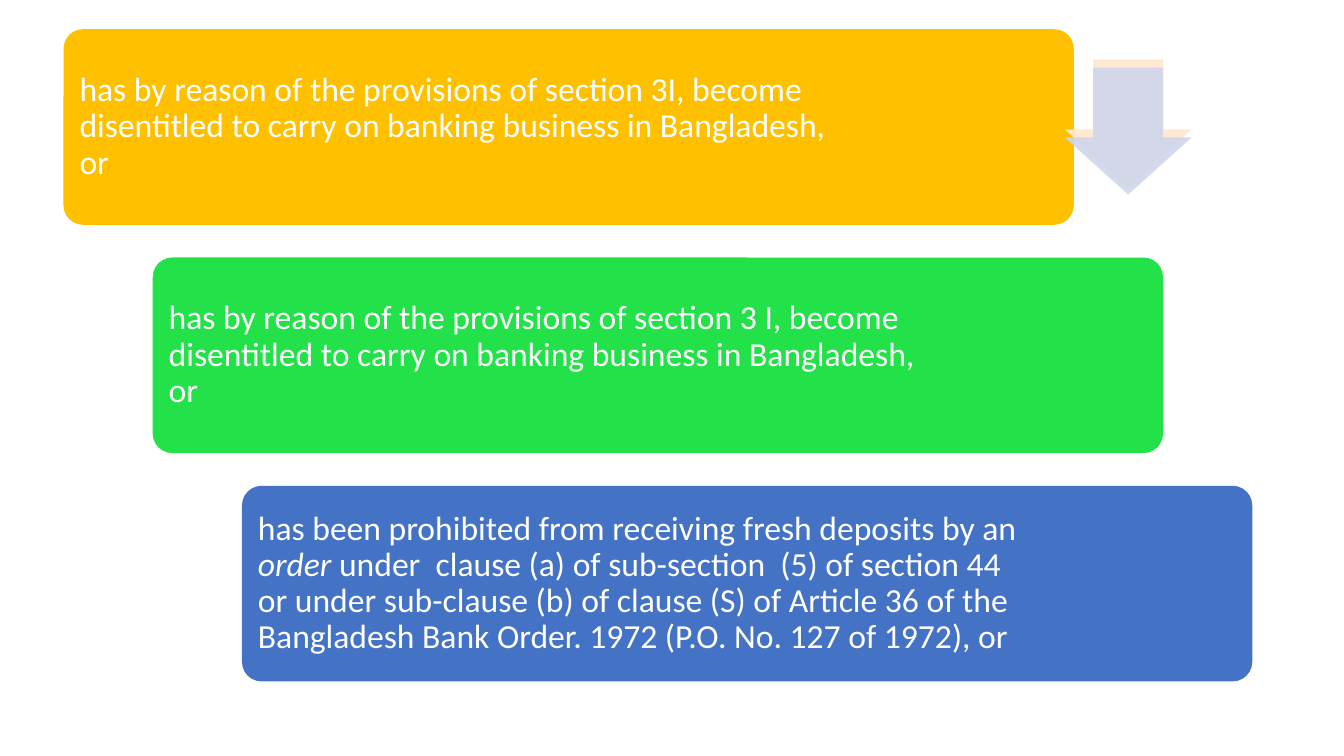
from lxml import etree
from pptx import Presentation
from pptx.dml.color import RGBColor
from pptx.enum.shapes import MSO_SHAPE
from pptx.enum.text import MSO_ANCHOR, PP_ALIGN
from pptx.oxml.ns import qn
from pptx.util import Inches, Pt

AMBER = RGBColor(0xFF, 0xC0, 0x00)
GREEN = RGBColor(0x23, 0xE1, 0x48)
BLUE = RGBColor(0x44, 0x72, 0xC4)
WHITE = RGBColor(0xFF, 0xFF, 0xFF)
PALE_ORANGE = RGBColor(0xFF, 0xE8, 0xCC)
PALE_BLUE = RGBColor(0xCF, 0xD6, 0xEA)

# Each step: fill, text width, runs as (text, italic)
STEPS = [
    (AMBER, 7.92, [("has by reason of the provisions of section 3I, become "
                    "disentitled to carry on banking business in Bangladesh, or", False)]),
    (GREEN, 7.76, [("has by reason of the provisions of section 3 I, become "
                    "disentitled to carry on banking business in Bangladesh, or", False)]),
    (BLUE, 7.76, [("has been prohibited from receiving fresh deposits by an ", False),
                  ("order ", True),
                  ("under  clause (a) of sub-section  (5) of section 44 or under "
                   "sub-clause (b) of clause (S) of Article 36 of the Bangladesh "
                   "Bank Order. 1972 (P.O. No. 127 of 1972), or", False)]),
]
LEFT, TOP = 0.63, 0.29
STEP_X, STEP_Y = 0.885, 2.265
CARD_WIDTH, CARD_HEIGHT = 10.02, 1.94
PADDING = 0.06


def add_filled_shape(page, kind, left, top, width, height, color, adjustments):
    shape = page.shapes.add_shape(
        kind, Inches(left), Inches(top), Inches(width), Inches(height))
    for index, value in enumerate(adjustments):
        shape.adjustments[index] = value
    shape.shadow.inherit = False
    shape.fill.solid()
    shape.fill.fore_color.rgb = color
    shape.line.fill.background()
    return shape


deck = Presentation()
deck.slide_width = Inches(13.33)
deck.slide_height = Inches(7.5)
page = deck.slides.add_slide(deck.slide_layouts[6])

# Staggered cards with their text
for number, (color, text_width, runs) in enumerate(STEPS):
    left = LEFT + number * STEP_X
    top = TOP + number * STEP_Y
    add_filled_shape(page, MSO_SHAPE.ROUNDED_RECTANGLE, left, top,
                     CARD_WIDTH, CARD_HEIGHT, color, [0.1])

    box = page.shapes.add_textbox(
        Inches(left + PADDING), Inches(top + PADDING),
        Inches(text_width), Inches(CARD_HEIGHT - 2 * PADDING))
    frame = box.text_frame
    frame.word_wrap = True
    frame.vertical_anchor = MSO_ANCHOR.MIDDLE
    frame.margin_left = frame.margin_right = Inches(0.1)
    frame.margin_top = frame.margin_bottom = Inches(0.1)
    para = frame.paragraphs[0]
    para.alignment = PP_ALIGN.LEFT
    para.line_spacing = 0.9
    for text, italic in runs:
        span = para.add_run()
        span.text = text
        span.font.name = "Calibri"
        span.font.size = Pt(24)
        span.font.italic = italic
        span.font.color.rgb = WHITE

# Two overlapping, slightly transparent arrows
for top, color in [(0.59, PALE_ORANGE), (0.67, PALE_BLUE)]:
    # Down arrow adjustments: shaft width, then head length
    arrow = add_filled_shape(page, MSO_SHAPE.DOWN_ARROW, 10.56, top,
                             1.26, 1.26, color, [0.55, 0.45])
    fill_color = arrow.fill._xPr.find(qn("a:solidFill")).find(qn("a:srgbClr"))
    etree.SubElement(fill_color, qn("a:alpha")).set("val", "90000")

deck.save("out.pptx")
